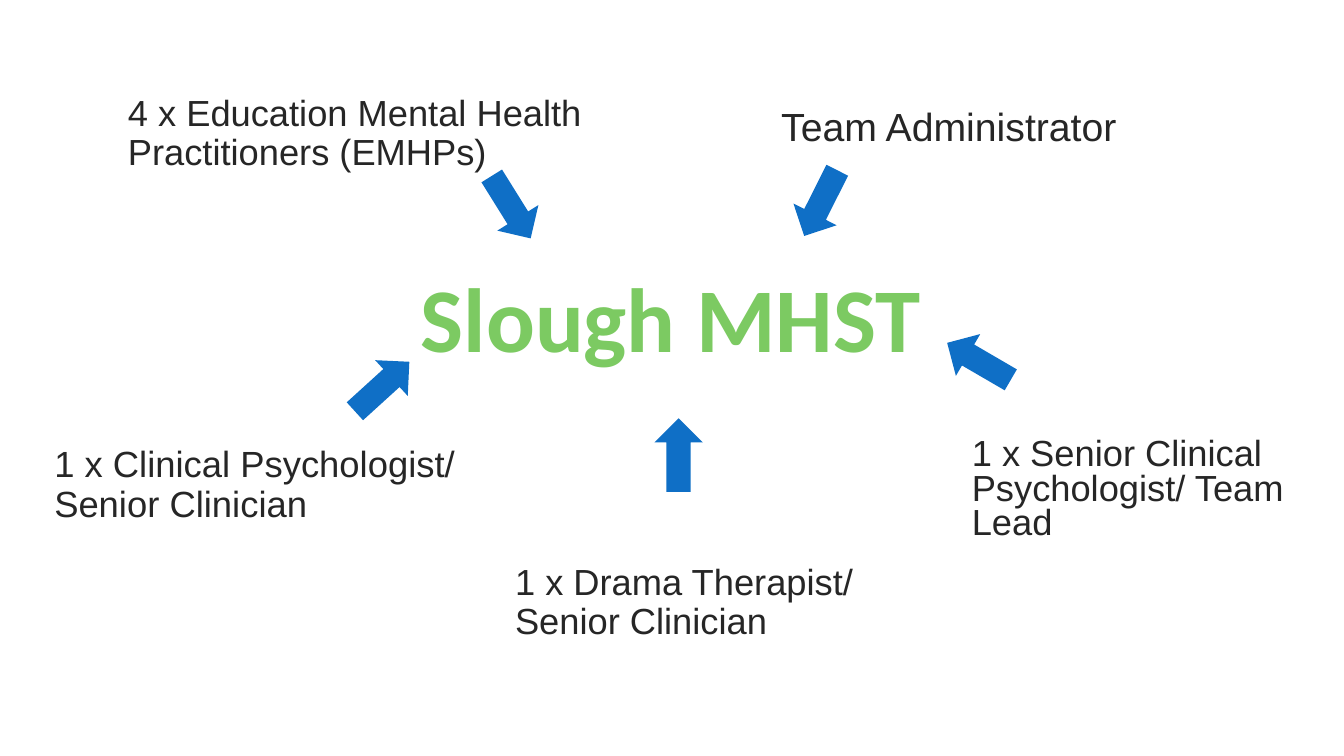
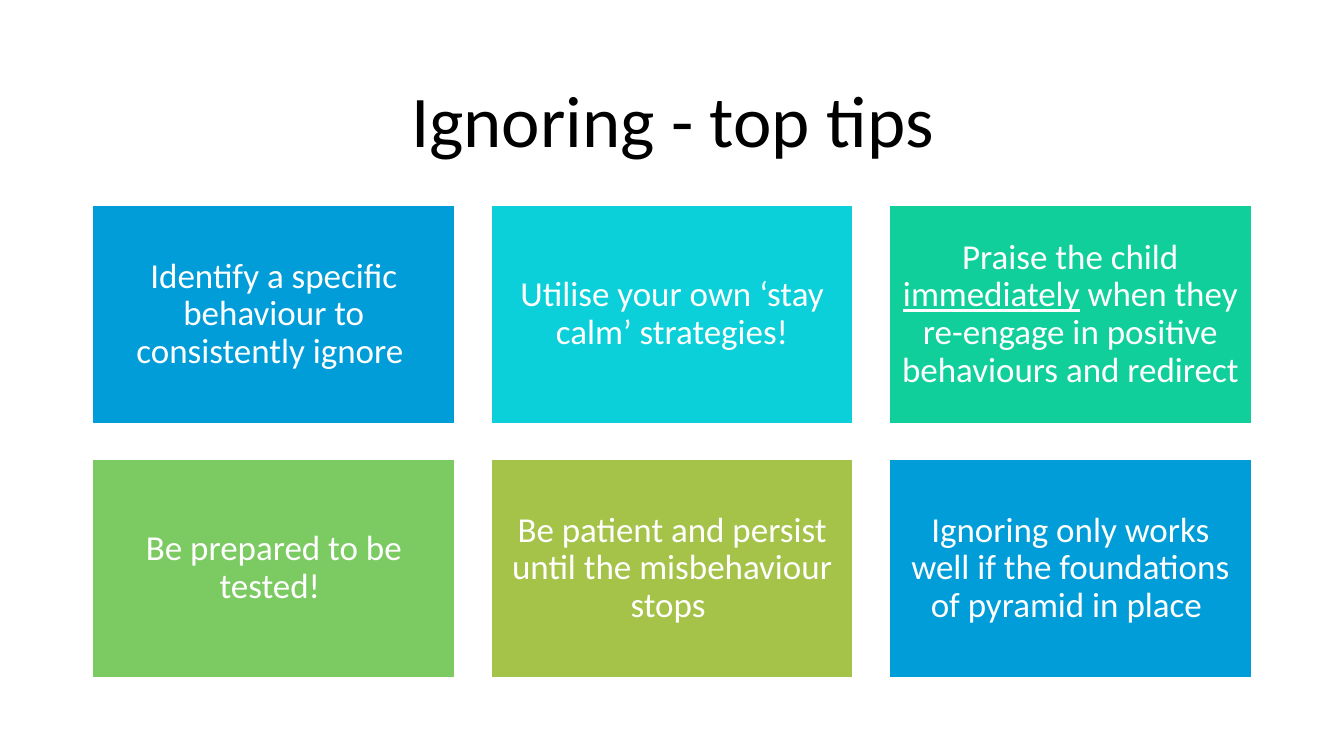
from pptx import Presentation
from pptx.dml.color import RGBColor
from pptx.enum.shapes import MSO_SHAPE
from pptx.enum.text import MSO_ANCHOR, PP_ALIGN
from pptx.util import Inches, Pt

THEME = {
    "blue": "0F6FC6", "sky": "009DD9", "cyan": "0BD0D9", "teal": "10CF9B",
    "green": "7CCA62", "olive": "A5C249", "white": "FFFFFF",
    "black": "000000", "ink": "262626",
    "role": {"name": "Arial", "size": 25.9, "color": "ink"},
    "team": {"name": "Calibri", "size": 65, "color": "green", "bold": True},
    "title": {"name": "Calibri", "size": 52, "color": "black"},
    "tip": {"name": "Calibri", "size": 25, "color": "white"},
}

# Text, box (left, top, width, height), line spacing, type size
ROLES = [
    ("4 x Education Mental\u00a0Health Practitioners\u00a0(EMHPs)", (1.17, 0.89, 4.78, 1.16), 0.9, 25.9),
    ("Team Administrator", (7.65, 1.02, 3.79, 1.16), 0.9, 28),
    ("1 x Clinical Psychologist/ Senior Clinician", (0.44, 4.38, 4.24, 1.16), 0.9, 26),
    ("1 x Drama Therapist/ Senior Clinician", (5.01, 5.55, 3.79, 1.16), 0.9, 25.9),
    ("1 x Senior Clinical Psychologist/ Team Lead", (9.54, 4.3, 3.79, 1.16), 0.8, 25.9),
]
# Left, top, rotation
ARROWS = [(4.83, 1.69, 148.1), (7.9, 1.65, 206.7), (3.55, 3.47, 47.7),
          (6.49, 4.15, 0), (9.47, 3.22, 300.2)]
ARROW_SIZE = (0.48, 0.73)

# Fill and runs; a run in a tuple is underlined
TIPS = [
    ("sky", ["Identify a specific behaviour to consistently ignore "]),
    ("cyan", ["Utilise your own ‘stay calm’ strategies!"]),
    ("teal", ["Praise the child ", ("immediately",),
              " when they re-engage in positive behaviours and redirect"]),
    ("green", ["Be prepared to be tested! "]),
    ("olive", ["Be patient and persist until the misbehaviour stops "]),
    ("sky", ["Ignoring only works well if the foundations of pyramid in place "]),
]
GRID = {"left": 0.92, "top": 2.04, "columns": 3, "width": 3.59, "height": 2.16, "gap": 0.36}


def rgb(name):
    return RGBColor.from_string(THEME[name])


def write(sp, runs, style, anchor=MSO_ANCHOR.TOP, size=None, **para):
    """Fill a shape with one paragraph of runs in a theme style."""
    tf = sp.text_frame
    tf.word_wrap = True
    tf.vertical_anchor = anchor
    p = tf.paragraphs[0]
    for key, value in para.items():
        setattr(p, key, value)
    fmt = dict(THEME[style])
    color = rgb(fmt.pop("color"))
    fmt["size"] = Pt(size or fmt["size"])
    for text in runs:
        r = p.add_run()
        r.text = text[0] if isinstance(text, tuple) else text
        for key, value in fmt.items():
            setattr(r.font, key, value)
        r.font.color.rgb = color
        if isinstance(text, tuple):
            r.font.underline = True
    return tf


def add_text(slide, box, text, style, **options):
    sp = slide.shapes.add_textbox(*map(Inches, box))
    return write(sp, [text], style, **options)


def add_block(slide, kind, box, fill, line=None):
    sp = slide.shapes.add_shape(kind, *map(Inches, box))
    sp.shadow.inherit = False
    sp.fill.solid()
    sp.fill.fore_color.rgb = rgb(fill)
    if line:
        sp.line.color.rgb = rgb(line)
        sp.line.width = Pt(1)
    else:
        sp.line.fill.background()
    return sp


def build_team(slide):
    for text, box, spacing, size in ROLES:
        add_text(slide, box, text, "role", size=size,
                 line_spacing=spacing, space_before=Pt(10))
    add_text(slide, (3.36, 2.54, 6.59, 1.19), "Slough MHST", "team",
             alignment=PP_ALIGN.CENTER)
    for left, top, angle in ARROWS:
        arrow = add_block(slide, MSO_SHAPE.UP_ARROW, (left, top, *ARROW_SIZE), "blue")
        arrow.rotation = angle


def build_tips(slide):
    centred = {"anchor": MSO_ANCHOR.MIDDLE, "alignment": PP_ALIGN.CENTER, "line_spacing": 0.9}
    add_text(slide, (0.92, 0.61, 11.5, 1.24), "Ignoring - top tips", "title", **centred)
    w, h, gap = GRID["width"], GRID["height"], GRID["gap"]
    for i, (fill, runs) in enumerate(TIPS):
        row, col = divmod(i, GRID["columns"])
        box = (GRID["left"] + col * (w + gap), GRID["top"] + row * (h + gap), w, h)
        card = add_block(slide, MSO_SHAPE.RECTANGLE, box, fill, "white")
        tf = write(card, runs, "tip", **centred)
        for side in ("left", "top", "right", "bottom"):
            setattr(tf, f"margin_{side}", Inches(0.1))


def main():
    prs = Presentation()
    prs.slide_width, prs.slide_height = Inches(13.33), Inches(7.5)
    for build in (build_team, build_tips):
        build(prs.slides.add_slide(prs.slide_layouts[6]))
    prs.save("out.pptx")


if __name__ == "__main__":
    main()
